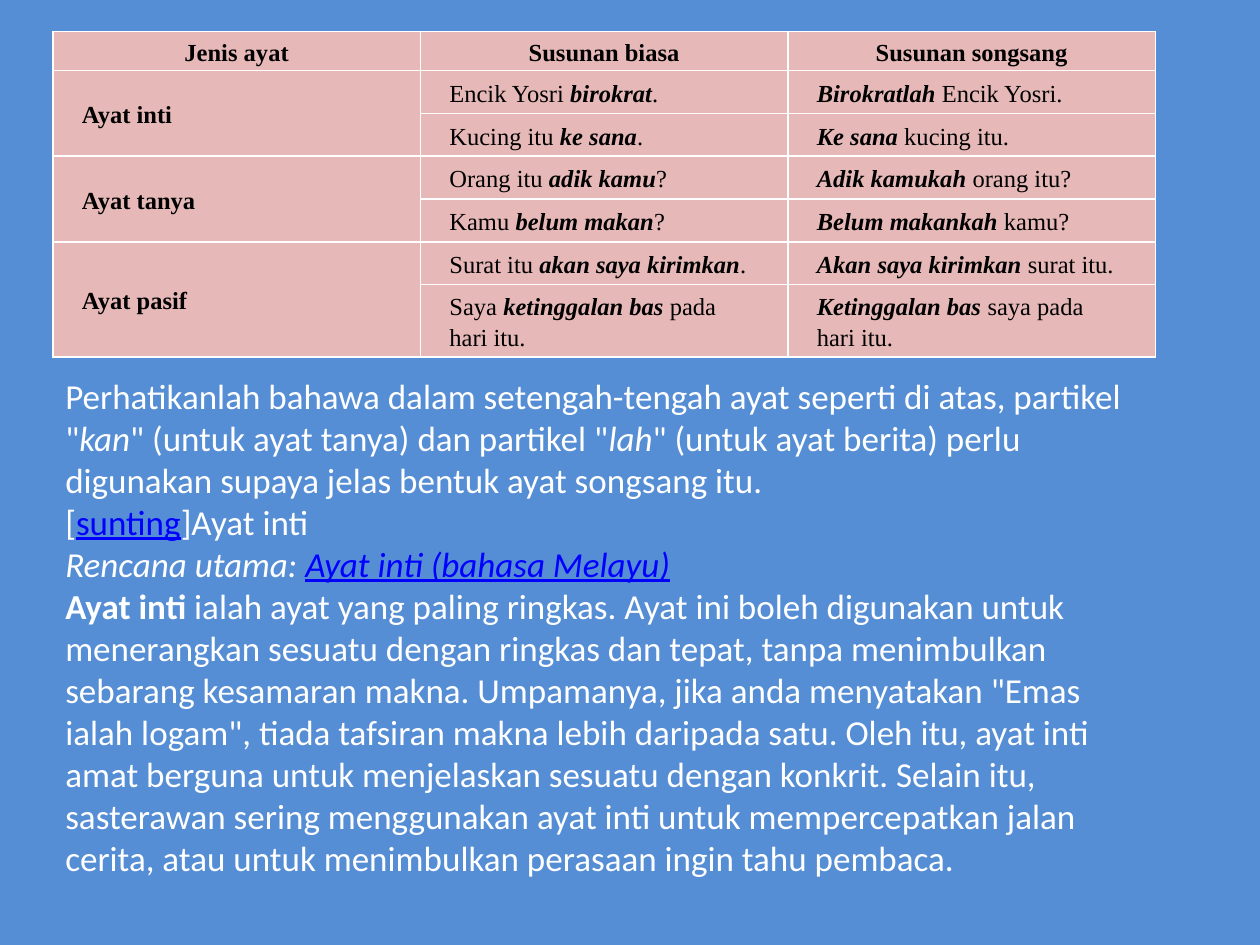
from pptx import Presentation
from pptx.dml.color import RGBColor
from pptx.enum.text import MSO_ANCHOR as Anchor, MSO_AUTO_SIZE as AutoSize, PP_ALIGN as Align
from pptx.util import Inches, Pt

BLUE, PINK, BLACK, WHITE, LINK = "558ED5", "E6B9B8", "000000", "FFFFFF", "0000FF"

HEADINGS = ["Jenis ayat", "Susunan biasa", "Susunan songsang"]

# Each example: usual order (start, predicate, end), then inverted order (predicate, rest)
SENTENCE_TYPES = {
    "Ayat inti": [
        (("Encik Yosri ", "birokrat", "."), ("Birokratlah ", "Encik Yosri.")),
        (("Kucing itu ", "ke sana", "."), ("Ke sana ", "kucing itu.")),
    ],
    "Ayat tanya": [
        (("Orang itu ", "adik kamu", "?"), ("Adik kamukah ", "orang itu?")),
        (("Kamu ", "belum makan", "?"), ("Belum makankah ", "kamu?")),
    ],
    "Ayat pasif": [
        (("Surat itu ", "akan saya kirimkan", "."), ("Akan saya kirimkan ", "surat itu.")),
        (("Saya ", "ketinggalan bas", " pada hari itu."),
         ("Ketinggalan bas ", "saya pada hari itu.")),
    ],
}

# Styles: b bold, i italic, u underlined link
EXPLANATION = [
    [("Perhatikanlah bahawa dalam setengah-tengah ayat seperti di atas, partikel \"", ""),
     ("kan", "i"),
     ("\" (untuk ayat tanya) dan partikel \"", ""),
     ("lah", "i"),
     ("\" (untuk ayat berita) perlu digunakan supaya jelas bentuk ayat songsang itu.", "")],
    [("[", ""), ("sunting", "u"), ("]Ayat inti", "")],
    [("Rencana utama: ", "i"), ("Ayat inti (bahasa Melayu)", "iu")],
    [("Ayat inti ", "b"),
     ("ialah ayat yang paling ringkas. Ayat ini boleh digunakan untuk menerangkan sesuatu "
      "dengan ringkas dan tepat, tanpa menimbulkan sebarang kesamaran makna. Umpamanya, jika "
      "anda menyatakan \"Emas ialah logam\", tiada tafsiran makna lebih daripada satu. Oleh itu, "
      "ayat inti amat berguna untuk menjelaskan sesuatu dengan konkrit. Selain itu, sasterawan "
      "sering menggunakan ayat inti untuk mempercepatkan jalan cerita, atau untuk menimbulkan "
      "perasaan ingin tahu pembaca.", "")],
]


def color(value):
    return RGBColor.from_string(value)


def add_runs(paragraph, runs, font, size, text_color):
    for text, style in runs:
        run = paragraph.add_run()
        run.text = text
        run.font.name, run.font.size = font, Pt(size)
        run.font.bold, run.font.italic = "b" in style, "i" in style
        run.font.underline = "u" in style
        run.font.color.rgb = color(LINK if "u" in style else text_color)


def fill_cell(cell, runs, side, edge, align=Align.LEFT):
    cell.margin_left = cell.margin_right = Inches(side)
    cell.margin_top = cell.margin_bottom = Inches(edge)
    cell.vertical_anchor = Anchor.MIDDLE
    paragraph = cell.text_frame.paragraphs[0]
    paragraph.alignment, paragraph.line_spacing = align, 1.15
    add_runs(paragraph, runs, "Times New Roman", 14, BLACK)


def add_sentence_table(slide, left, top, width, header_height, row_height):
    row_count = 1 + sum(len(examples) for examples in SENTENCE_TYPES.values())
    height = header_height + (row_count - 1) * row_height
    table = slide.shapes.add_table(row_count, len(HEADINGS), Inches(left), Inches(top),
                                   Inches(width), Inches(height)).table
    for index, row in enumerate(table.rows):
        row.height = Inches(row_height if index else header_height)
    for cell in table.iter_cells():
        cell.fill.solid()
        cell.fill.fore_color.rgb = color(PINK)

    for column, heading in enumerate(HEADINGS):
        fill_cell(table.cell(0, column), [(heading, "b")], 0.01, 0.01, Align.CENTER)
    row = 1
    for name, examples in SENTENCE_TYPES.items():
        label = table.cell(row, 0)
        label.merge(table.cell(row + len(examples) - 1, 0))
        fill_cell(label, [(name, "b")], 0.23, 0.02)
        for usual, inverted in examples:
            fill_cell(table.cell(row, 1), zip(usual, ("", "bi", "")), 0.23, 0.02)
            fill_cell(table.cell(row, 2), zip(inverted, ("bi", "")), 0.23, 0.02)
            row += 1


def add_explanation(slide, left, top, width, height):
    box = slide.shapes.add_textbox(Inches(left), Inches(top), Inches(width), Inches(height))
    frame = box.text_frame
    frame.word_wrap = True
    frame.auto_size = AutoSize.SHAPE_TO_FIT_TEXT
    for index, runs in enumerate(EXPLANATION):
        paragraph = frame.add_paragraph() if index else frame.paragraphs[0]
        add_runs(paragraph, runs, "Calibri", 20, WHITE)


def main():
    presentation = Presentation()
    presentation.slide_width, presentation.slide_height = Inches(10), Inches(7.5)
    slide = presentation.slides.add_slide(presentation.slide_layouts[6])
    slide.background.fill.solid()
    slide.background.fill.fore_color.rgb = color(BLUE)
    margin = 0.42
    add_explanation(slide, margin, 2.92, 8.83, 4.14)
    add_sentence_table(slide, margin, 0.25, 8.75, 0.31, 0.34)
    presentation.save("out.pptx")


if __name__ == "__main__":
    main()
